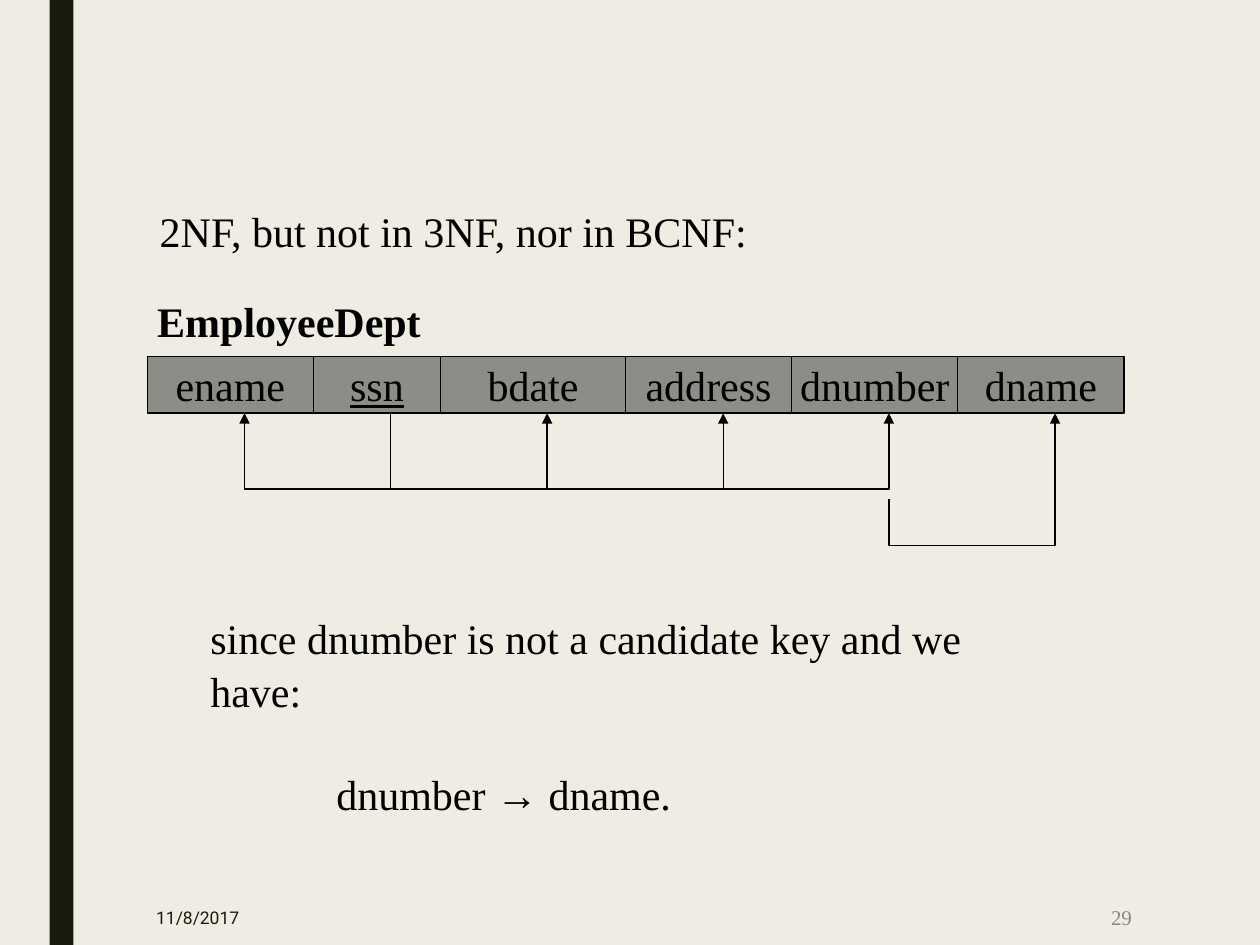
from itertools import accumulate

from lxml import etree
from pptx import Presentation
from pptx.dml.color import RGBColor
from pptx.enum.shapes import MSO_SHAPE
from pptx.enum.text import MSO_ANCHOR, PP_ALIGN
from pptx.oxml.ns import qn
from pptx.util import Cm, Pt

RECTANGLE = MSO_SHAPE.RECTANGLE
TOP, MIDDLE = MSO_ANCHOR.TOP, MSO_ANCHOR.MIDDLE
LEFT, CENTER, RIGHT = PP_ALIGN.LEFT, PP_ALIGN.CENTER, PP_ALIGN.RIGHT

COLORS = {
    "background": "EFEDE3",
    "bar": "191B0E",
    "cell": "8C8D86",
    "ink": "000000",
    "page": "898989",
}


class SchemaSlide:
    serif = "Times New Roman"
    line_width = Pt(0.75)

    def __init__(self, prs):
        self.slide = prs.slides.add_slide(prs.slide_layouts[6])
        self.shapes = self.slide.shapes
        self.fill(self.slide.background, "background")

    def color(self, key):
        return RGBColor.from_string(COLORS[key])

    def fill(self, target, key):
        target.fill.solid()
        target.fill.fore_color.rgb = self.color(key)

    def outline(self, shape):
        shape.line.color.rgb = self.color("ink")
        shape.line.width = self.line_width

    def add_words(self, paragraph, wording, color="ink", align=LEFT, **font_format):
        paragraph.alignment = align
        run = paragraph.add_run()
        run.text = wording
        run.font.color.rgb = self.color(color)
        for name, value in {"name": self.serif, "size": Pt(24), **font_format}.items():
            setattr(run.font, name, value)

    def text(self, box, wording, wrap=True, anchor=TOP, **style):
        frame = self.shapes.add_textbox(*map(Cm, box)).text_frame
        frame.word_wrap = wrap
        frame.vertical_anchor = anchor
        self.add_words(frame.paragraphs[0], wording, **style)
        return frame

    def rectangle(self, box, color):
        shape = self.shapes.add_shape(RECTANGLE, *map(Cm, box))
        shape.shadow.inherit = False
        self.fill(shape, color)
        shape.line.fill.background()
        return shape

    def cell(self, box, attribute, **style):
        shape = self.rectangle(box, "cell")
        self.outline(shape)
        frame = shape.text_frame
        frame.word_wrap = False
        frame.vertical_anchor = MIDDLE
        self.add_words(frame.paragraphs[0], attribute, align=CENTER, **style)

    def dependency(self, start, target, low):
        """Draw an arrow from start down to low, across and up to target."""
        corners = [(start[0], low), (target[0], low), target]
        builder = self.shapes.build_freeform(*map(Cm, start))
        builder.add_line_segments([(Cm(x), Cm(y)) for x, y in corners], close=False)
        arrow = builder.convert_to_shape()
        arrow.shadow.inherit = False
        arrow.fill.background()
        self.outline(arrow)
        etree.SubElement(arrow.line._get_or_add_ln(), qn("a:tailEnd"), type="triangle")


def main():
    prs = Presentation()
    prs.slide_width, prs.slide_height = Cm(25.4), Cm(19.05)
    page = SchemaSlide(prs)

    # Side bar
    page.rectangle((1, 0, 0.48, 19.05), "bar")

    # Statement and its reason
    page.text((2.97, 4.01, 12.47, 1.27), "2NF, but not in 3NF, nor in BCNF:", wrap=False)
    reason = page.text((3.99, 12.19, 17.68, 3.3),
                       "since dnumber is not a candidate key and we have:")
    rule = reason.add_paragraph()
    page.add_words(rule, "dnumber → dname.")
    rule.space_before = Pt(29)
    rule._p.get_or_add_pPr().set("marL", str(Cm(2.54)))
    for paragraph in reason.paragraphs:
        paragraph.line_spacing = 1.04

    # Relation schema
    page.text((2.92, 5.84, 6.55, 1.27), "EmployeeDept", bold=True)
    row_top, row_height = 7.19, 1.14
    widths = {"ename": 3.35, "ssn": 2.56, "bdate": 3.73,
              "address": 3.35, "dnumber": 3.35, "dname": 3.35}
    lefts = accumulate(widths.values(), initial=2.97)
    for (attribute, width), left in zip(widths.items(), lefts):
        page.cell((left, row_top, width, row_height), attribute,
                  underline=attribute == "ssn")

    # Functional dependencies
    row_bottom = row_top + row_height
    ports = {"ename": 4.93, "ssn": 7.88, "bdate": 11.03,
             "address": 14.58, "dnumber": 17.92, "dname": 21.27}
    for attribute in ("ename", "bdate", "dnumber", "address"):
        page.dependency((ports["ssn"], row_bottom), (ports[attribute], row_bottom), 9.86)
    page.dependency((ports["dnumber"], 10.06), (ports["dname"], row_bottom), 11)

    # Footer
    page.text((2.9, 17.93, 2.51, 1.12), "11/8/2017", anchor=MIDDLE,
              color="bar", name="Roboto", size=Pt(10))
    page.text((19.74, 17.93, 3.33, 1.12), "29", anchor=MIDDLE,
              color="page", align=RIGHT, size=Pt(12))

    prs.save("out.pptx")


if __name__ == "__main__":
    main()
